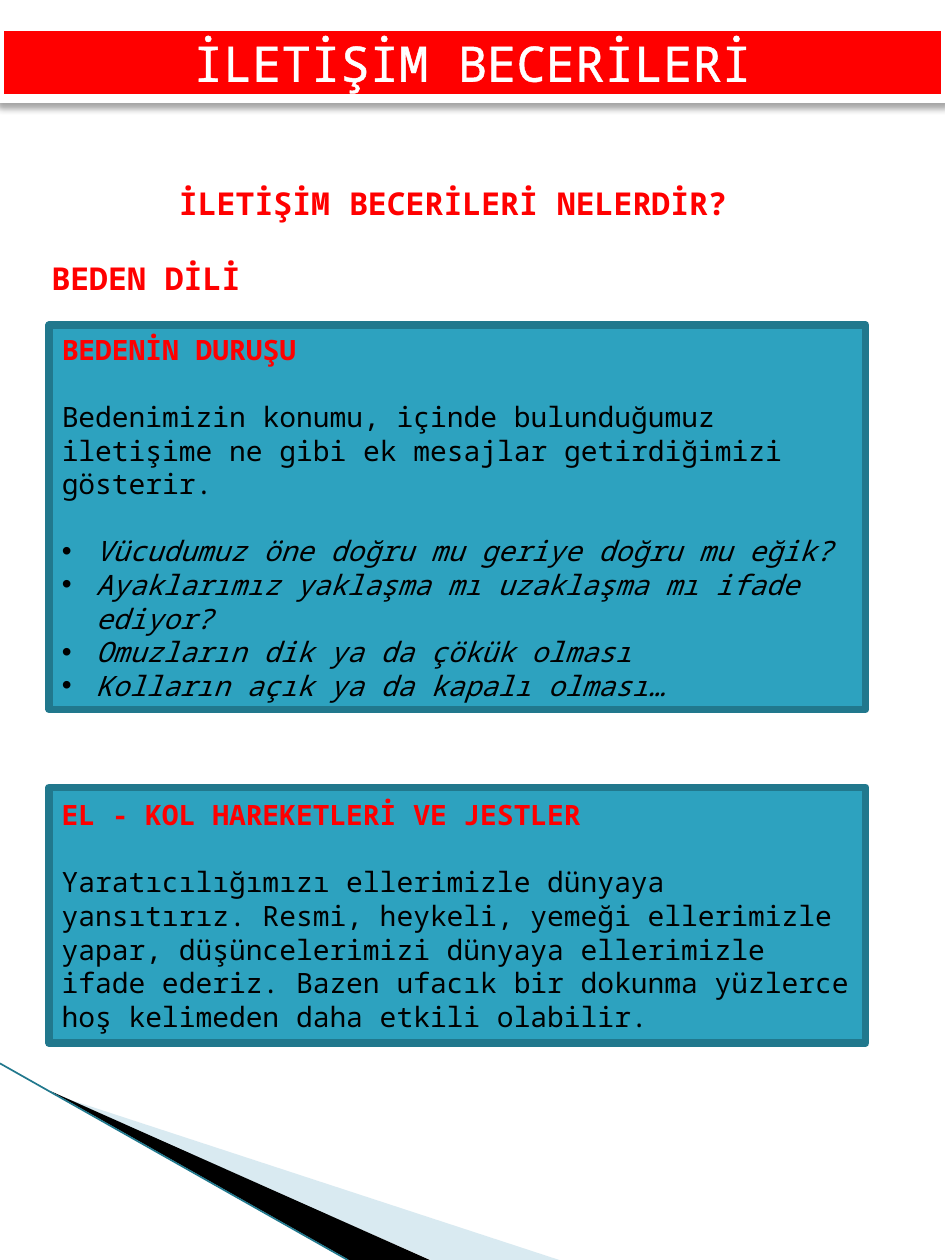
from lxml.etree import SubElement
from pptx import Presentation
from pptx.dml.color import RGBColor
from pptx.enum.shapes import MSO_CONNECTOR, MSO_SHAPE
from pptx.enum.text import MSO_ANCHOR, MSO_AUTO_SIZE, PP_ALIGN
from pptx.oxml import parse_xml
from pptx.oxml.ns import nsdecls, qn
from pptx.util import Inches, Pt

FONT = "Noto Sans Mono"
RED = RGBColor(0xFF, 0x00, 0x00)
WHITE = RGBColor(0xFF, 0xFF, 0xFF)
BLACK = RGBColor(0x00, 0x00, 0x00)
TEAL = RGBColor(0x2D, 0xA2, 0xBF)
DARK_TEAL = RGBColor(0x21, 0x78, 0x8D)
PALE_BLUE = RGBColor(0xA0, 0xCB, 0xDC)

# Content
TITLE = "İLETİŞİM BECERİLERİ"
QUESTION = "İLETİŞİM BECERİLERİ NELERDİR? "
TOPIC = "BEDEN DİLİ"
POSTURE = {
    "heading": "BEDENİN DURUŞU",
    "text": "Bedenimizin konumu, içinde bulunduğumuz iletişime ne gibi ek "
            "mesajlar getirdiğimizi gösterir.",
    "bullets": [
        "Vücudumuz öne doğru mu geriye doğru mu eğik?",
        "Ayaklarımız yaklaşma mı uzaklaşma mı ifade ediyor?",
        "Omuzların dik ya da çökük olması",
        "Kolların açık ya da kapalı olması…",
    ],
}
GESTURES = {
    "heading": "EL - KOL HAREKETLERİ VE JESTLER",
    "text": "Yaratıcılığımızı ellerimizle dünyaya yansıtırız. Resmi, heykeli, "
            "yemeği ellerimizle yapar, düşüncelerimizi dünyaya ellerimizle "
            "ifade ederiz. Bazen ufacık bir dokunma yüzlerce hoş kelimeden "
            "daha etkili olabilir.",
    "bullets": [],
}
WEDGES = [  # corner points, colour, opacity in percent
    ([(0.41, 8.68), (4.44, 10), (3.42, 10)], PALE_BLUE, 40),
    ([(0.4, 8.66), (3.41, 10), (2.77, 10)], BLACK, 100),
]

# Layout
BOX_LEFT, BOX_WIDTH = 0.39, 6.48
LINE_HEIGHT = 1.2  # of the text size
BULLET_INDENT = Inches(0.27)


def place(shape, left, top, width, height):
    shape.left, shape.top = Inches(left), Inches(top)
    shape.width, shape.height = Inches(width), Inches(height)


def paint(shape, fill, line, line_width):
    shape.fill.solid()
    shape.fill.fore_color.rgb = fill
    shape.line.color.rgb = line
    shape.line.width = Pt(line_width)


def prepare_frame(shape, anchor):
    frame = shape.text_frame
    frame.word_wrap = True
    frame.auto_size = MSO_AUTO_SIZE.NONE
    frame.vertical_anchor = anchor
    frame.margin_left = frame.margin_right = Inches(0.1)
    frame.margin_top = frame.margin_bottom = Inches(0.05)
    return frame


def write(frame, text, size, color, bold=False, italic=False, gap=False,
          align=PP_ALIGN.LEFT, bullet=False):
    """Fill the empty first paragraph or add one; gap leaves a line free."""
    paragraph = frame.paragraphs[0]
    if paragraph.runs:
        paragraph = frame.add_paragraph()
    paragraph.alignment = align
    paragraph.space_before = Pt(size * LINE_HEIGHT if gap else 0)
    properties = paragraph._p.get_or_add_pPr()
    indent = BULLET_INDENT if bullet else 0
    properties.set("marL", str(indent))
    properties.set("indent", str(-indent))
    if bullet:
        SubElement(properties, qn("a:buChar")).set("char", "•")
    else:
        SubElement(properties, qn("a:buNone"))
    run = paragraph.add_run()
    run.text = text
    font = run.font
    font.name, font.size = FONT, Pt(size)
    font.bold, font.italic = bold, italic
    font.color.rgb = color
    return run


def fill_box(shape, content, top, height):
    place(shape, BOX_LEFT, top, BOX_WIDTH, height)
    paint(shape, TEAL, DARK_TEAL, 4.33)
    shape.shadow.inherit = False
    frame = prepare_frame(shape, MSO_ANCHOR.MIDDLE)
    write(frame, content["heading"], 16, RED, bold=True)
    write(frame, content["text"], 16, BLACK, gap=True)
    for index, item in enumerate(content["bullets"]):
        write(frame, item, 16, BLACK, italic=True, gap=index == 0, bullet=True)


presentation = Presentation()
presentation.slide_width, presentation.slide_height = Inches(7.5), Inches(10)
slide = presentation.slides.add_slide(presentation.slide_layouts[1])
shapes = slide.shapes

# Corner decoration
for points, color, opacity in WEDGES:
    corners = [(Inches(x), Inches(y)) for x, y in points]
    builder = shapes.build_freeform(*corners[0])
    builder.add_line_segments(corners[1:])
    wedge = builder.convert_to_shape()
    wedge.shadow.inherit = False
    wedge.fill.solid()
    wedge.fill.fore_color.rgb = color
    wedge.line.fill.background()
    if opacity < 100:
        color_element = wedge._element.spPr.find(qn("a:solidFill"))[0]
        SubElement(color_element, qn("a:alpha")).set("val", str(opacity * 1000))
edge = shapes.add_connector(MSO_CONNECTOR.STRAIGHT, Inches(0), Inches(8.44),
                            Inches(2.76), Inches(10))
edge.line.color.rgb = DARK_TEAL
edge.line.width = Pt(0.95)
SubElement(edge._element.spPr, qn("a:effectLst"))

# Title banner with a soft shadow and outlined letters
banner = shapes.title
place(banner, 0, 0.21, 7.5, 0.57)
paint(banner, RED, WHITE, 5)
banner._element.spPr.append(parse_xml(
    f'<a:effectLst {nsdecls("a")}><a:outerShdw blurRad="{Pt(4)}" '
    f'dist="{Pt(3)}" dir="5400000" rotWithShape="0"><a:srgbClr val="000000">'
    '<a:alpha val="35000"/></a:srgbClr></a:outerShdw></a:effectLst>'))
title_run = write(prepare_frame(banner, MSO_ANCHOR.TOP), TITLE, 28, WHITE,
                  align=PP_ALIGN.CENTER)
title_run._r.get_or_add_rPr().insert(0, parse_xml(
    f'<a:ln {nsdecls("a")} w="{Pt(1.45)}"><a:solidFill>'
    f'<a:srgbClr val="{WHITE}"/></a:solidFill></a:ln>'))

# Question and topic
heading = shapes.add_textbox(Inches(0.31), Inches(1.41), Inches(6.72), Inches(1.01))
frame = prepare_frame(heading, MSO_ANCHOR.TOP)
write(frame, QUESTION, 18, RED, bold=True, align=PP_ALIGN.CENTER)
write(frame, TOPIC, 18, RED, bold=True, gap=True)

# Text boxes
fill_box(slide.placeholders[1], POSTURE, 2.58, 3.05)
gestures_box = shapes.add_shape(MSO_SHAPE.RECTANGLE, 0, 0, 0, 0)
fill_box(gestures_box, GESTURES, 6.25, 2.03)

presentation.save("out.pptx")
